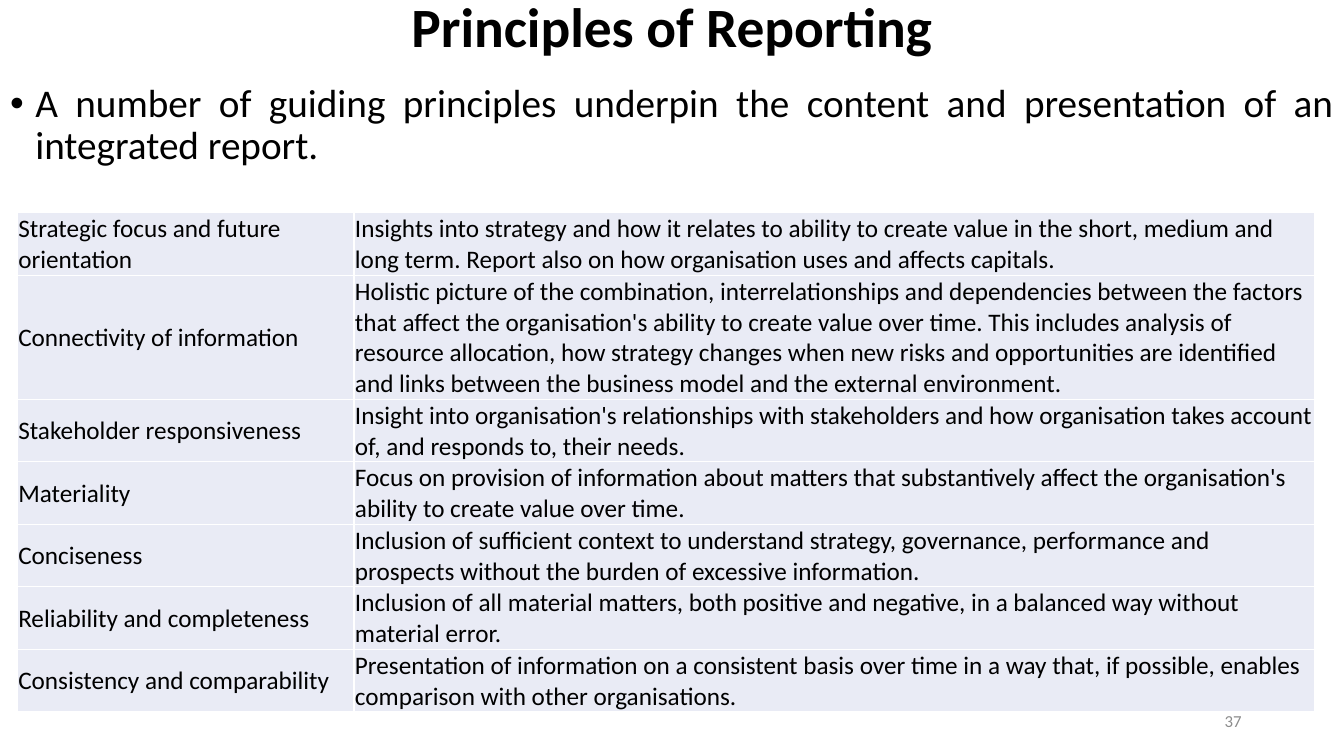
"""Build the slide on the principles of reporting."""
from dataclasses import dataclass

from lxml import etree
from pptx import Presentation
from pptx import util as u
from pptx.dml import color
from pptx.enum import text
from pptx.oxml import ns

HUES = {"ink": "000000", "page": "8C8C8C", "cell": "E9EBF5", "rule": "FFFFFF"}
FONT = "Calibri"
LINE = 21.8
WIDTHS = (240.5, 686.1)


@dataclass
class Label:
    """Text with its look."""
    words: str
    size: float
    hue: str = "ink"
    bold: bool = False
    align: text.PP_ALIGN = text.PP_ALIGN.LEFT
    pitch: float = 1.0


@dataclass
class Entry:
    """One table row: a topic, its meaning and its count of lines."""
    topic: str
    meaning: str
    lines: int = 2


ENTRIES = [
    Entry("Strategic focus and future orientation",
          "Insights into strategy and how it relates to ability to create value in the short, "
          "medium and long term. Report also on how organisation uses and affects capitals."),
    Entry("Connectivity of information",
          "Holistic picture of the combination, interrelationships and dependencies between the "
          "factors that affect the organisation's ability to create value over time. This includes "
          "analysis of resource allocation, how strategy changes when new risks and opportunities "
          "are identified and links between the business model and the external environment.", 4),
    Entry("Stakeholder responsiveness",
          "Insight into organisation's relationships with stakeholders and how organisation takes "
          "account of, and responds to, their needs."),
    Entry("Materiality",
          "Focus on provision of information about matters that substantively affect the "
          "organisation's ability to create value over time."),
    Entry("Conciseness",
          "Inclusion of sufficient context to understand strategy, governance, performance and "
          "prospects without the burden of excessive information."),
    Entry("Reliability and completeness",
          "Inclusion of all material matters, both positive and negative, in a balanced way "
          "without material error."),
    Entry("Consistency and comparability",
          "Presentation of information on a consistent basis over time in a way that, if possible, "
          "enables comparison with other organisations."),
]


def tint(name: str) -> color.RGBColor:
    """Return a named colour."""
    return color.RGBColor.from_string(HUES[name])


def write(frame, label: Label):
    """Write a label as the first paragraph of a frame and return it."""
    para = frame.paragraphs[0]
    para.alignment, para.line_spacing = label.align, label.pitch
    para.space_before = u.Pt(0)
    run = para.add_run()
    run.text = label.words
    run.font.name, run.font.size, run.font.bold = FONT, u.Pt(label.size), label.bold
    run.font.color.rgb = tint(label.hue)
    return para


def place(shape, left: float, top: float, width: float, height: float) -> None:
    """Move and size a text shape, keeping its text size fixed."""
    shape.left, shape.top = u.Pt(left), u.Pt(top)
    shape.width, shape.height = u.Pt(width), u.Pt(height)
    shape.text_frame.word_wrap = True
    shape.text_frame.auto_size = text.MSO_AUTO_SIZE.NONE


def bullet(para) -> None:
    """Give a paragraph a hanging round bullet."""
    props = para._p.get_or_add_pPr()
    props.set("marL", str(u.Pt(18)))
    props.set("indent", str(u.Pt(-18)))
    etree.SubElement(props, ns.qn("a:buFont")).set("typeface", "Arial")
    etree.SubElement(props, ns.qn("a:buChar")).set("char", "•")


def edge(cell) -> None:
    """Draw thin lines on all four sides of a cell."""
    props = cell._tc.get_or_add_tcPr()
    for spot, side in enumerate("LRTB"):
        line = etree.Element(ns.qn(f"a:ln{side}"), w=str(u.Pt(1)))
        fill = etree.SubElement(line, ns.qn("a:solidFill"))
        etree.SubElement(fill, ns.qn("a:srgbClr")).set("val", HUES["rule"])
        props.insert(spot, line)


def fill_cell(cell, words: str) -> None:
    """Fill and format one table cell."""
    cell.margin_left = cell.margin_right = cell.margin_top = u.Pt(0.7)
    cell.margin_bottom = u.Pt(0)
    cell.vertical_anchor = text.MSO_ANCHOR.MIDDLE
    cell.fill.solid()
    cell.fill.fore_color.rgb = tint("cell")
    edge(cell)
    write(cell.text_frame, Label(words, 18))


def add_grid(slide) -> None:
    """Add the table of principles."""
    height = LINE * sum(entry.lines for entry in ENTRIES)
    grid = slide.shapes.add_table(len(ENTRIES), len(WIDTHS), u.Pt(12.4), u.Pt(152),
                                  u.Pt(sum(WIDTHS)), u.Pt(height)).table
    grid.first_row = grid.horz_banding = False
    for column, width in zip(grid.columns, WIDTHS):
        column.width = u.Pt(width)
    for row, entry in zip(grid.rows, ENTRIES):
        row.height = u.Pt(LINE * entry.lines)
        for cell, words in zip(row.cells, (entry.topic, entry.meaning)):
            fill_cell(cell, words)


def main() -> None:
    """Build and save the deck."""
    deck = Presentation()
    deck.slide_width, deck.slide_height = u.Pt(960), u.Pt(540)
    slide = deck.slides.add_slide(deck.slide_layouts[1])
    title, body = slide.placeholders

    place(title, 66, 0, 828, 41.8)
    title.text_frame.vertical_anchor = text.MSO_ANCHOR.MIDDLE
    write(title.text_frame, Label("Principles of Reporting", 39.6, bold=True,
                                  align=text.PP_ALIGN.CENTER, pitch=0.9))

    place(body, 0, 56.2, 960, 483.8)
    para = write(body.text_frame, Label(
        "A number of guiding principles underpin the content and presentation "
        "of an integrated report.", 28, align=text.PP_ALIGN.JUSTIFY, pitch=0.9))
    bullet(para)

    page = slide.shapes.add_textbox(0, 0, 0, 0)
    place(page, 678, 500.5, 216, 28.75)
    page.text_frame.vertical_anchor = text.MSO_ANCHOR.MIDDLE
    write(page.text_frame, Label("37", 12, "page", align=text.PP_ALIGN.RIGHT))

    add_grid(slide)
    deck.save("out.pptx")


if __name__ == "__main__":
    main()
